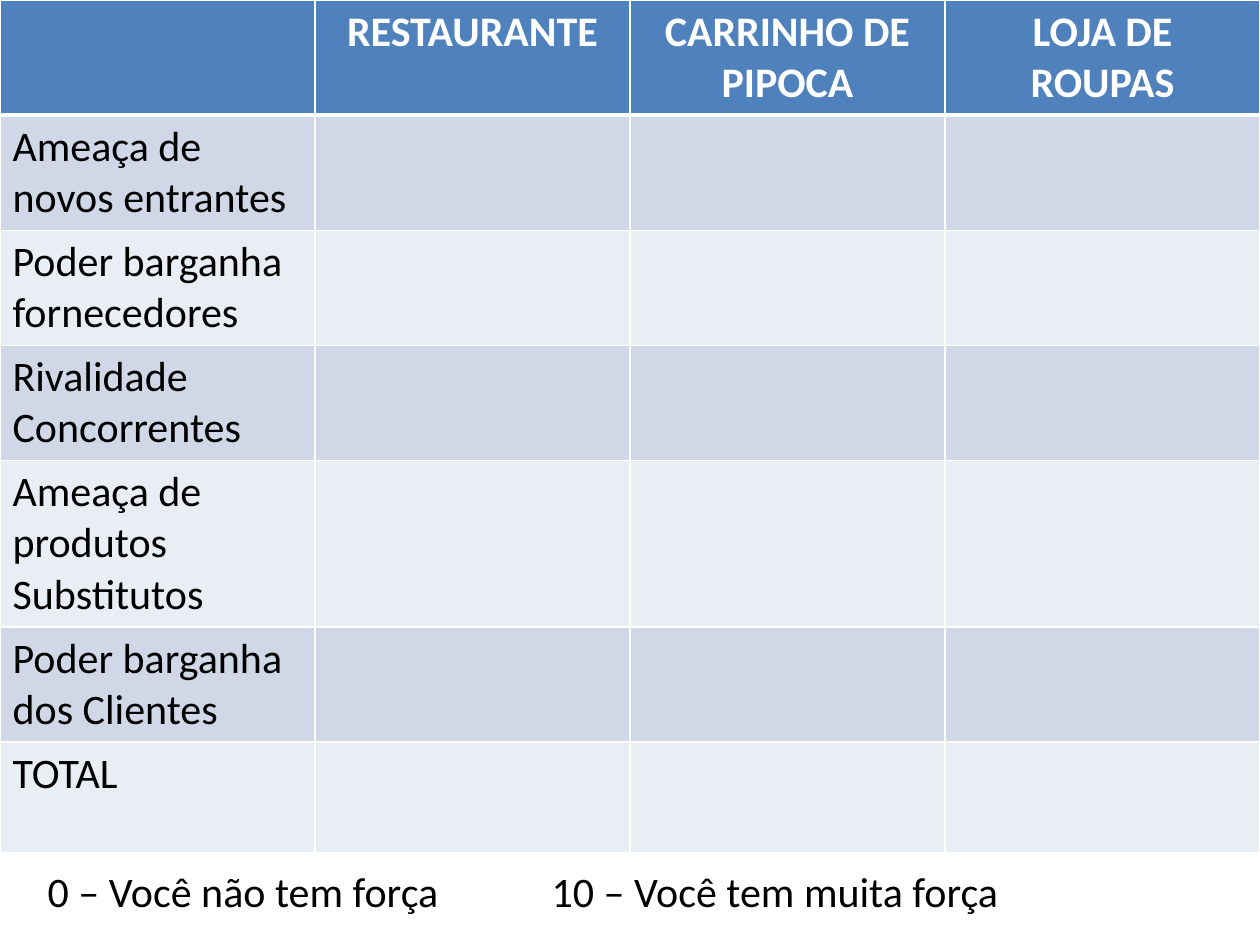
from lxml import etree
from pptx import Presentation, util as u
from pptx.dml.color import RGBColor
from pptx.enum import text
from pptx.oxml.ns import qn

HEADS = ["", "RESTAURANTE", "CARRINHO DE PIPOCA", "LOJA DE ROUPAS"]
FORCES = [
    "Ameaça de novos entrantes",
    "Poder barganha fornecedores",
    "Rivalidade Concorrentes",
    "Ameaça de produtos Substitutos",
    "Poder barganha dos Clientes",
    "TOTAL",
]
BLUE, BANDS = "4F81BD", ("E9EDF4", "D0D8E8")
WHITE, BLACK = "FFFFFF", "000000"


def color(code):
    return RGBColor.from_string(code)


class Deck:
    """Holds the deck style, its current slide and the ways to fill it."""

    def __init__(self, wide, high, font, size):
        self.prs = Presentation()
        self.wide, self.high = u.Inches(wide), u.Inches(high)
        self.prs.slide_width, self.prs.slide_height = self.wide, self.high
        self.font, self.size = font, u.Pt(size)
        self.slide = self.prs.slides.add_slide(self.prs.slide_layouts[6])

    def area(self, left, top, wide, high):
        return (int(left * self.wide), int(top * self.high),
                int(wide * self.wide), int(high * self.high))

    def put(self, frame, words, ink, bold=False, align=text.PP_ALIGN.LEFT):
        frame.text = words
        para = frame.paragraphs[0]
        para.alignment = align
        for run in para.runs:
            font = run.font
            font.name, font.size, font.bold = self.font, self.size, bold
            font.color.rgb = color(ink)

    def edge(self, cell, side, width):
        line = etree.SubElement(cell._tc.get_or_add_tcPr(), qn("a:ln" + side),
                                w=str(u.Pt(width)))
        fill = etree.SubElement(line, qn("a:solidFill"))
        etree.SubElement(fill, qn("a:srgbClr"), val=WHITE)

    def table(self, rows, *box):
        grid = self.slide.shapes.add_table(len(rows), len(rows[0]), *self.area(*box)).table
        for r, row in enumerate(rows):
            head = r == 0
            for c, words in enumerate(row):
                cell = grid.cell(r, c)
                for side in "LRTB":
                    thick = (r, side) in ((0, "B"), (1, "T"))
                    self.edge(cell, side, 3 if thick else 1)
                cell.fill.solid()
                cell.fill.fore_color.rgb = color(BLUE if head else BANDS[r % 2])
                if words:
                    align = text.PP_ALIGN.CENTER if head else text.PP_ALIGN.LEFT
                    self.put(cell.text_frame, words, WHITE if head else BLACK, head, align)

    def label(self, words, *box):
        frame = self.slide.shapes.add_textbox(*self.area(*box)).text_frame
        frame.word_wrap = True
        frame.auto_size = text.MSO_AUTO_SIZE.SHAPE_TO_FIT_TEXT
        self.put(frame, words, BLACK)


def main():
    deck = Deck(10, 7.5, "Calibri", 24)
    rows = [HEADS] + [[force, "", "", ""] for force in FORCES]
    deck.table(rows, 0, 0, 1, 6.16 / 7.5)
    deck.label("0 – Você não tem força\t\t10 – Você tem muita força",
               0.028, 6.82 / 7.5, 0.972, 0.5 / 7.5)
    deck.prs.save("out.pptx")


if __name__ == "__main__":
    main()
